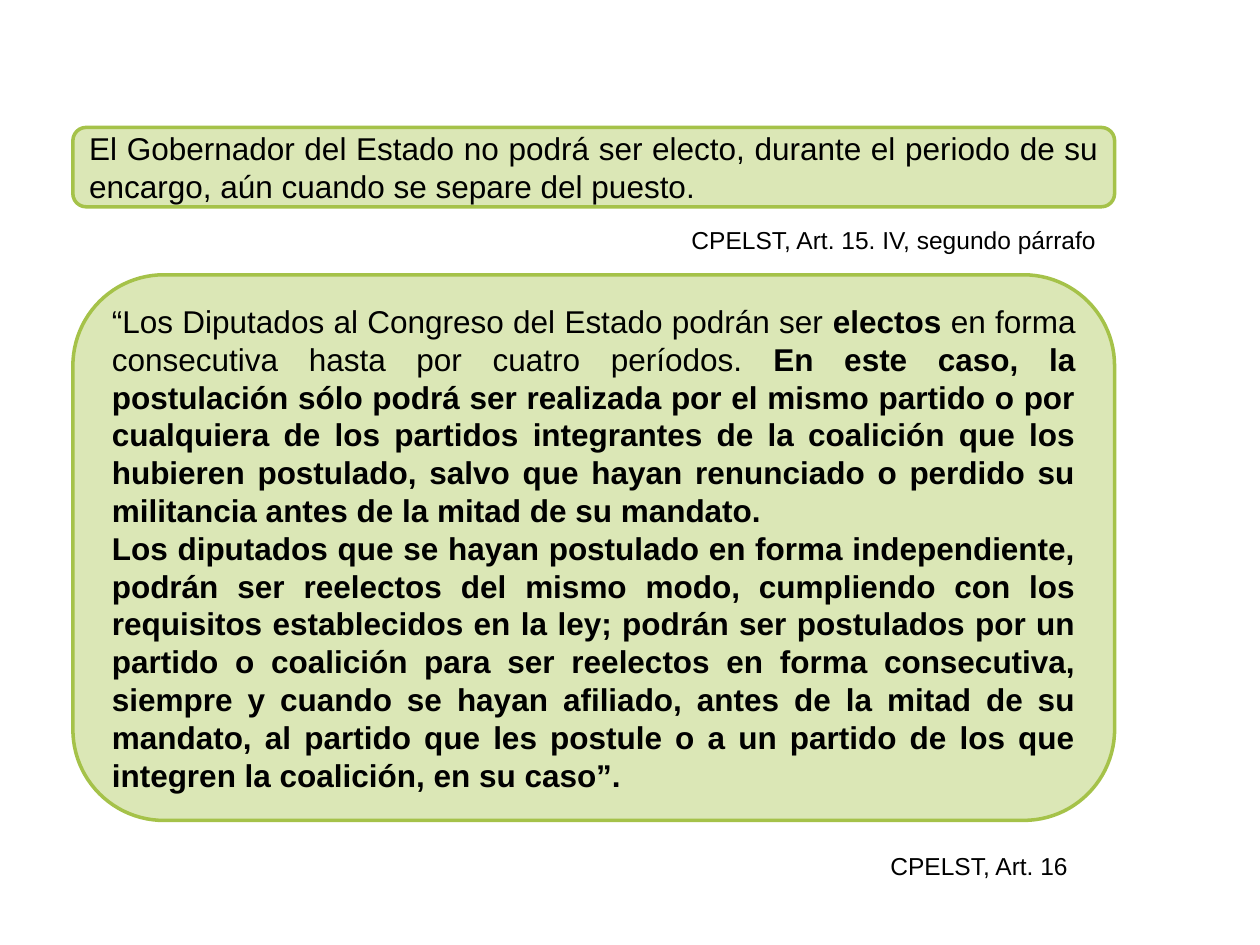
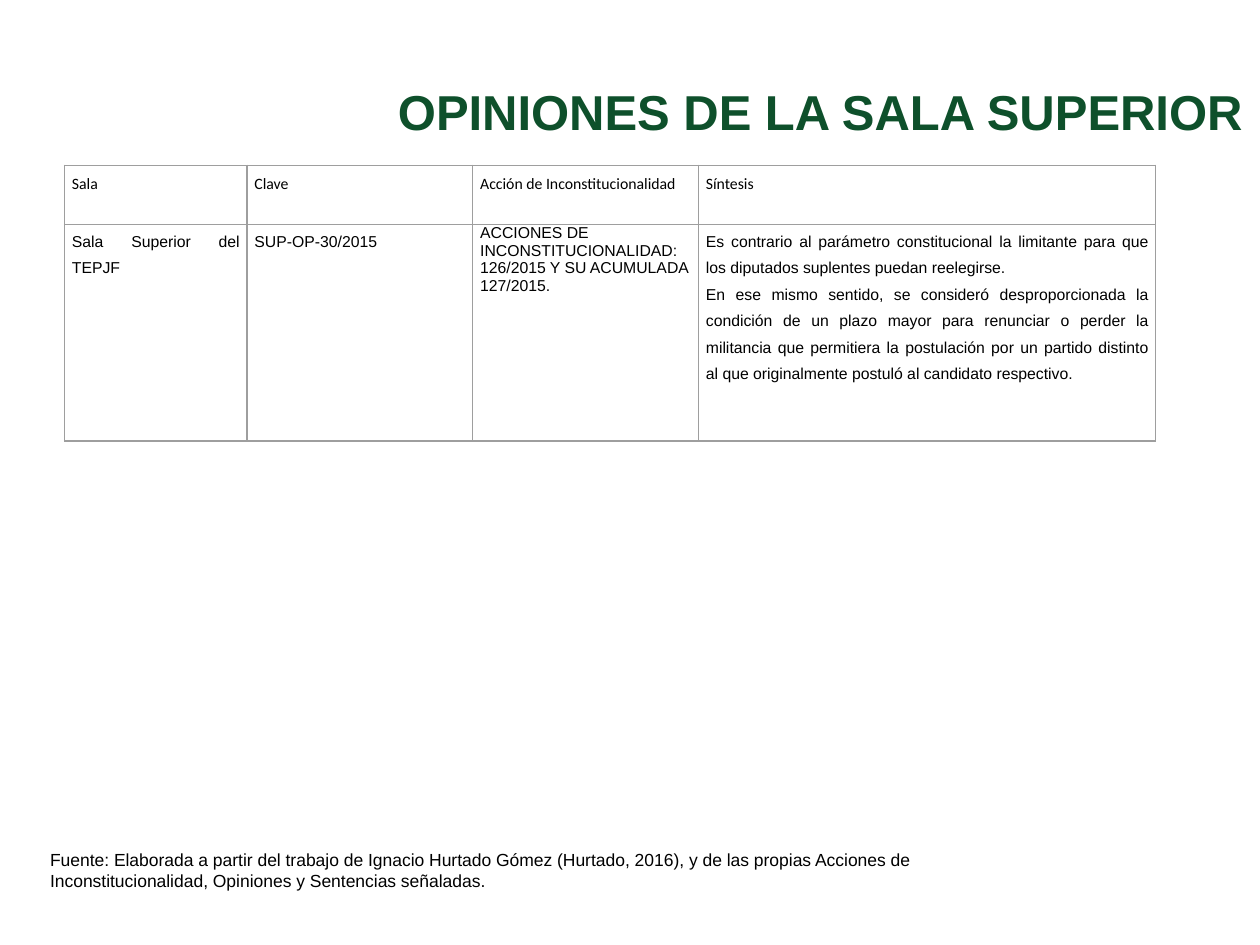
from lxml.etree import SubElement
from pptx import Presentation
from pptx.dml.color import RGBColor
from pptx.enum.shapes import MSO_SHAPE
from pptx.enum.text import MSO_ANCHOR, MSO_AUTO_SIZE, PP_ALIGN
from pptx.oxml.ns import qn
from pptx.util import Cm, Pt

BLACK, DARK_GREEN = "000000", "0E502B"
CARD_FILL, CARD_LINE, GRID = "DBE7B6", "A5C249", "9E9E9E"
BODY_FONT, HEADER_FONT = "Arial", "Calibri"
CARD_LEFT, CARD_WIDTH = 1.47, 21

GOVERNOR = [[("El Gobernador del Estado no podrá ser electo, durante el periodo de su "
              "encargo, aún cuando se separe del puesto.", False)]]
DEPUTIES = [
    [("“Los Diputados al Congreso del Estado podrán ser ", False),
     ("electos ", True),
     ("en forma consecutiva hasta por cuatro períodos. ", False),
     ("En este caso, la postulación sólo podrá ser realizada por el mismo partido o por "
      "cualquiera de los partidos integrantes de la coalición que los hubieren postulado, "
      "salvo que hayan renunciado o perdido su militancia antes de la mitad de su mandato.",
      True)],
    [("Los diputados que se hayan postulado en forma independiente, podrán ser reelectos "
      "del mismo modo, cumpliendo con los requisitos establecidos en la ley; podrán ser "
      "postulados por un partido o coalición para ser reelectos en forma consecutiva, "
      "siempre y cuando se hayan afiliado, antes de la mitad de su mandato, al partido que "
      "les postule o a un partido de los que integren la coalición, en su caso”.", True)],
]
HEADERS = ["Sala", "Clave", "Acción de Inconstitucionalidad", "Síntesis"]
OPINION = [
    "Sala Superior del TEPJF",
    "SUP-OP-30/2015",
    "ACCIONES DE INCONSTITUCIONALIDAD: 126/2015 Y SU ACUMULADA 127/2015.",
    "Es contrario al parámetro constitucional la limitante para que los diputados suplentes "
    "puedan reelegirse.\n"
    "En ese mismo sentido, se consideró desproporcionada la condición de un plazo mayor para "
    "renunciar o perder la militancia que permitiera la postulación por un partido distinto "
    "al que originalmente postuló al candidato respectivo.",
]
ACTION_COLUMN = HEADERS.index("Acción de Inconstitucionalidad")


def rgb(value):
    """Turn a hex string into a colour."""
    return RGBColor.from_string(value)


def style_runs(frame, size, color=BLACK, font=BODY_FONT, align=PP_ALIGN.LEFT, spacing=None):
    """Format every paragraph and run of a text frame."""
    for paragraph in frame.paragraphs:
        paragraph.alignment = align
        if spacing:
            paragraph.line_spacing = spacing
        for run in paragraph.runs:
            run.font.name, run.font.size = font, Pt(size)
            run.font.color.rgb = rgb(color)


def add_card(slide, top, height, paragraphs):
    """Add a rounded green card holding an article of law."""
    card = slide.shapes.add_shape(MSO_SHAPE.ROUNDED_RECTANGLE, Cm(CARD_LEFT), Cm(top),
                                  Cm(CARD_WIDTH), Cm(height))
    card.shadow.inherit = False
    card.fill.solid()
    card.fill.fore_color.rgb = rgb(CARD_FILL)
    card.line.color.rgb = rgb(CARD_LINE)
    card.line.width = Pt(2)
    frame = card.text_frame
    frame.word_wrap = True
    frame.vertical_anchor = MSO_ANCHOR.MIDDLE
    for index, pieces in enumerate(paragraphs):
        paragraph = frame.add_paragraph() if index else frame.paragraphs[0]
        for text, bold in pieces:
            run = paragraph.add_run()
            run.text, run.font.bold = text, bold
    style_runs(frame, 18, align=PP_ALIGN.JUSTIFY)


def add_label(slide, text, left, top, width, height, size, wrap=True):
    """Add a plain text box that grows with its text and return its frame."""
    frame = slide.shapes.add_textbox(Cm(left), Cm(top), Cm(width), Cm(height)).text_frame
    frame.word_wrap = wrap
    frame.auto_size = MSO_AUTO_SIZE.SHAPE_TO_FIT_TEXT
    frame.text = text
    style_runs(frame, size)
    return frame


def add_title(slide, text):
    """Add the right-aligned green title."""
    frame = add_label(slide, text, 2.44, 1.4, 22.86, 1.78, 28)
    frame.auto_size = MSO_AUTO_SIZE.NONE
    frame.margin_top = frame.margin_bottom = Cm(0.25)
    style_runs(frame, 28, DARK_GREEN, align=PP_ALIGN.RIGHT)
    frame.paragraphs[0].runs[0].font.bold = True


def draw_borders(cell):
    """Draw a thin grey line on the four sides of a cell."""
    properties = cell._tc.get_or_add_tcPr()
    for side in ("a:lnL", "a:lnR", "a:lnT", "a:lnB"):
        line = SubElement(properties, qn(side), w=str(Pt(0.75)))
        SubElement(SubElement(line, qn("a:solidFill")), qn("a:srgbClr"), val=GRID)


def add_opinions_table(slide, left, top, widths, heights, rows):
    """Add the bordered table of opinions."""
    table = slide.shapes.add_table(len(rows), len(widths), Cm(left), Cm(top),
                                   Cm(sum(widths)), Cm(sum(heights))).table
    table.horz_banding = table.first_row = False
    for column, width in zip(table.columns, widths):
        column.width = Cm(width)
    for row_index, (texts, height) in enumerate(zip(rows, heights)):
        table.rows[row_index].height = Cm(height)
        for column_index, text in enumerate(texts):
            cell = table.cell(row_index, column_index)
            draw_borders(cell)
            cell.fill.background()
            cell.margin_left = cell.margin_right = Cm(0.15)
            cell.margin_top = cell.margin_bottom = 0
            cell.text_frame.text = text
            if row_index and column_index == ACTION_COLUMN:
                style_runs(cell.text_frame, 9)
            else:
                style_runs(cell.text_frame, 9, font=BODY_FONT if row_index else HEADER_FONT,
                           align=PP_ALIGN.JUSTIFY, spacing=1.5)


def main():
    """Build both slides and save them."""
    deck = Presentation()
    deck.slide_width, deck.slide_height = Cm(25.4), Cm(19.05)
    blank = deck.slide_layouts[6]

    articles = deck.slides.add_slide(blank)
    add_card(articles, 5.54, 11, DEPUTIES)
    add_label(articles, "CPELST, Art. 16", 17.7, 17.04, 4.19, 0.86, 14, wrap=False)
    add_card(articles, 2.57, 1.6, GOVERNOR)
    add_label(articles, "CPELST, Art. 15. IV, segundo párrafo", 13.69, 4.42, 8.84, 0.86, 14,
              wrap=False)

    opinions = deck.slides.add_slide(blank)
    add_opinions_table(opinions, 1.3, 3.33, [3.68, 4.55, 4.55, 9.22], [1.19, 4.37],
                       [HEADERS, OPINION])
    add_title(opinions, "OPINIONES DE LA SALA SUPERIOR")
    add_label(opinions, "Fuente: Elaborada a partir del trabajo de Ignacio Hurtado Gómez "
              "(Hurtado, 2016), y de las propias Acciones de Inconstitucionalidad, Opiniones y "
              "Sentencias señaladas.", 0.76, 16.99, 20.73, 1.12, 10)

    deck.save("out.pptx")


if __name__ == "__main__":
    main()
